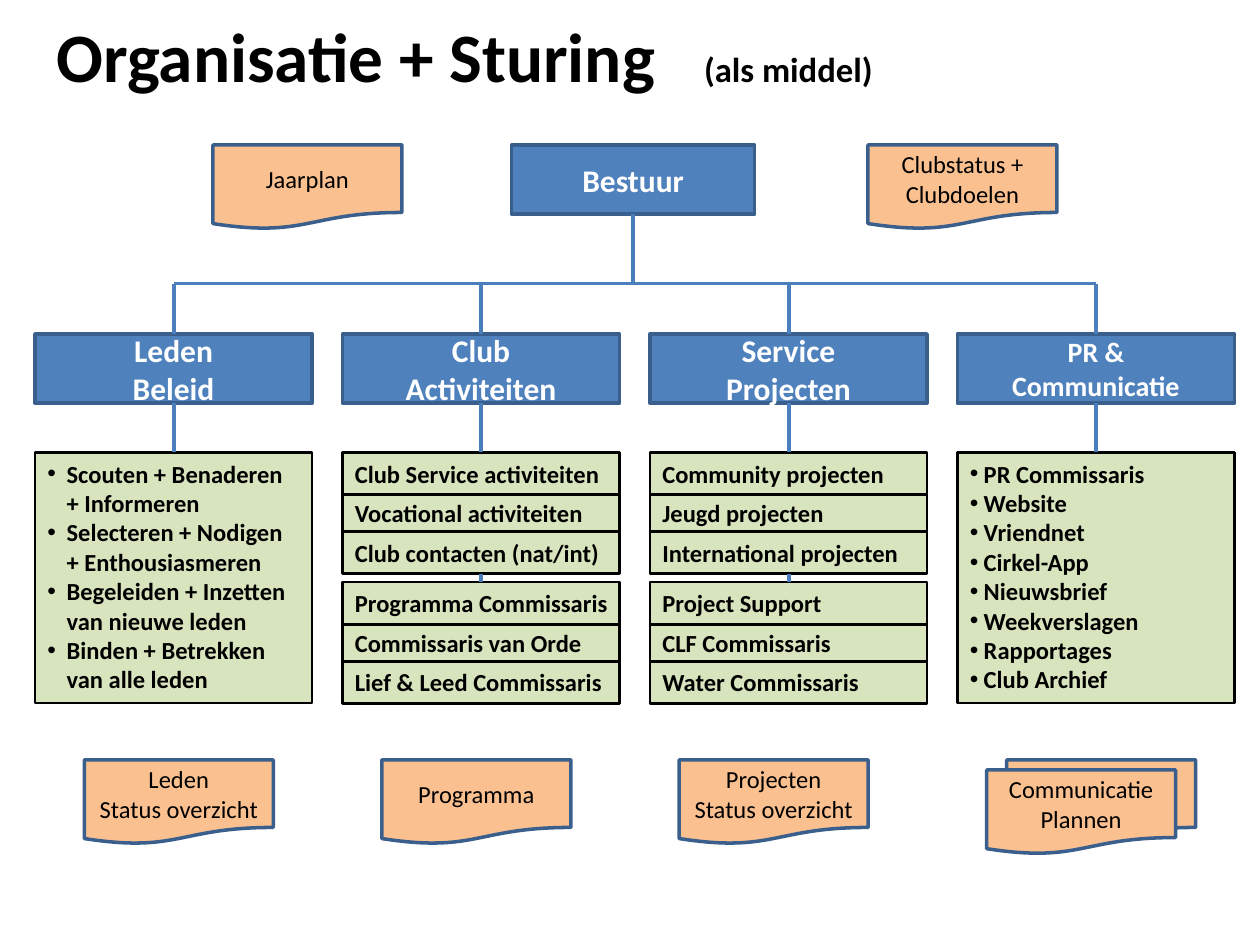
from lxml import etree
from pptx import Presentation
from pptx.dml.color import RGBColor
from pptx.enum.shapes import MSO_CONNECTOR, MSO_SHAPE
from pptx.enum.text import MSO_ANCHOR, PP_ALIGN
from pptx.oxml.ns import qn
from pptx.util import Pt

RECTANGLE, DOCUMENT = MSO_SHAPE.RECTANGLE, MSO_SHAPE.FLOWCHART_DOCUMENT
STRAIGHT = MSO_CONNECTOR.STRAIGHT
TOP, MIDDLE = MSO_ANCHOR.TOP, MSO_ANCHOR.MIDDLE
LEFT, CENTER = PP_ALIGN.LEFT, PP_ALIGN.CENTER
TOP_SIDE, BOTTOM_SIDE = 0, 2

BLACK = RGBColor(0x00, 0x00, 0x00)
WHITE = RGBColor(0xFF, 0xFF, 0xFF)
BLUE = RGBColor(0x4F, 0x81, 0xBD)
DARK_BLUE = RGBColor(0x3A, 0x5F, 0x8C)
LINE_BLUE = RGBColor(0x4B, 0x7E, 0xBC)
GREEN = RGBColor(0xD7, 0xE4, 0xBD)
ORANGE = RGBColor(0xFA, 0xC0, 0x90)

# Fill, outline, outline width, text colour, anchor, alignment, font values
HEADER = (BLUE, DARK_BLUE, 2, WHITE, MIDDLE, CENTER,
          {"name": "Calibri", "size": Pt(18), "bold": True})
SMALL_HEADER = HEADER[:-1] + ({**HEADER[-1], "size": Pt(16)},)
DETAIL = (GREEN, BLACK, 1.5, BLACK, TOP, LEFT,
          {"name": "Calibri", "size": Pt(14), "bold": True})
PAPER = (ORANGE, DARK_BLUE, 2, BLACK, MIDDLE, CENTER,
         {"name": "Calibri", "size": Pt(14), "bold": False})

COLUMN_LEFT, COLUMN_STEP, COLUMN_WIDTH = 20, 175.7, 158.4
HEADER_TOP, HEADER_HEIGHT = 190.8, 39.6
BUS_TOP = 162
DETAIL_TOP, DETAIL_HEIGHT = 258.5, 143.3
GROUP_STEP, ROW_STEP, ROW_HEIGHT = 74.2, 22.6, 24.2
PAPER_WIDTH, PAPER_HEIGHT = 108, 48.2

# Header style, header lines, text indent, then a list or groups of rows
COLUMNS = [
    (HEADER, ["Leden", "Beleid"], 11,
     ["•Scouten + Benaderen", "+ Informeren",
      "•Selecteren + Nodigen", "+ Enthousiasmeren",
      "•Begeleiden + Inzetten", "van nieuwe leden",
      "•Binden + Betrekken", "van alle leden"]),
    (HEADER, ["Club", "Activiteiten"], 0,
     [["Club Service activiteiten", "Vocational activiteiten",
       "Club contacten (nat/int)"],
      ["Programma Commissaris", "Commissaris van Orde",
       "Lief & Leed Commissaris"]]),
    (HEADER, ["Service", "Projecten"], 0,
     [["Community projecten", "Jeugd projecten",
       "International projecten"],
      ["Project Support", "CLF Commissaris", "Water Commissaris"]]),
    (SMALL_HEADER, ["PR &", "Communicatie"], 8,
     ["•PR Commissaris", "•Website", "•Vriendnet", "•Cirkel-App",
      "•Nieuwsbrief", "•Weekverslagen", "•Rapportages", "•Club Archief"]),
]

# Left, top and lines of each document
PAPERS = [
    (121.7, 82.8, ["Jaarplan"]),
    (496, 82.8, ["Clubstatus +", "Clubdoelen"]),
    (48.2, 434.2, ["Leden", "Status overzicht"]),
    (218.2, 434.2, ["Programma"]),
    (388.1, 434.2, ["Projecten", "Status overzicht"]),
    (575.3, 434.2, []),
    (563.8, 440, ["Communicatie", "Plannen"]),
]

deck = Presentation()
deck.slide_width, deck.slide_height = Pt(720), Pt(540)
page = deck.slides.add_slide(deck.slide_layouts[6])


def add_box(kind, left, top, width, height, lines, style, indent=0):
    fill, outline, weight, ink, anchor, align, font = style
    box = page.shapes.add_shape(kind, Pt(left), Pt(top), Pt(width), Pt(height))
    box.shadow.inherit = False
    box.fill.solid()
    box.fill.fore_color.rgb = fill
    box.line.color.rgb = outline
    box.line.width = Pt(weight)
    frame = box.text_frame
    frame.word_wrap = True
    frame.vertical_anchor = anchor
    if align == LEFT:  # room for the longest row on one line
        frame.margin_right = Pt(2)
    for index, line in enumerate(lines):
        para = frame.add_paragraph() if index else frame.paragraphs[0]
        para.alignment = align
        if indent:
            props = para._p.get_or_add_pPr()
            props.set("marL", str(Pt(indent)))
            if line.startswith("•"):
                props.set("indent", str(-Pt(indent)))
                etree.SubElement(props, qn("a:buFont")).set("typeface", "Arial")
                etree.SubElement(props, qn("a:buChar")).set("char", "•")
        span = para.add_run()
        span.text = line.removeprefix("•")
        span.font.color.rgb = ink
        for name, value in font.items():
            setattr(span.font, name, value)
    return box


def add_link(start, end, upper=None, lower=None):
    link = page.shapes.add_connector(STRAIGHT, *[Pt(v) for v in start + end])
    link.line.color.rgb = LINE_BLUE
    link.line.width = Pt(2.25)
    etree.SubElement(link._element.spPr, qn("a:effectLst"))
    if upper is not None:
        link.begin_connect(upper, BOTTOM_SIDE)
    if lower is not None:
        link.end_connect(lower, TOP_SIDE)


# Title with the subtitle at a tab stop
title = page.shapes.add_textbox(Pt(25.2), Pt(9.4), Pt(675), Pt(44))
title.text_frame.word_wrap = True
title.text_frame.vertical_anchor = MIDDLE
para = title.text_frame.paragraphs[0]
tabs = etree.SubElement(para._p.get_or_add_pPr(), qn("a:tabLst"))
tab = etree.SubElement(tabs, qn("a:tab"))
tab.set("pos", str(Pt(370)))
tab.set("algn", "l")
for text, size in [("Organisatie + Sturing", 39.6), ("\t(als middel)", 19.8)]:
    span = para.add_run()
    span.text = text
    span.font.color.rgb = BLACK
    for name, value in {"name": "Calibri", "size": Pt(size), "bold": True}.items():
        setattr(span.font, name, value)

# Board and the line that spans the columns
first_center = COLUMN_LEFT + COLUMN_WIDTH / 2
last_center = first_center + COLUMN_STEP * (len(COLUMNS) - 1)
board = add_box(RECTANGLE, 292.3, 82.8, 139, HEADER_HEIGHT, ["Bestuur"], HEADER)
add_link((361.8, 122.4), (361.8, BUS_TOP), upper=board)
add_link((first_center, BUS_TOP), (last_center, BUS_TOP))

# Columns: header, then one list or two groups of three rows
for number, (style, heading, indent, content) in enumerate(COLUMNS):
    left = COLUMN_LEFT + number * COLUMN_STEP
    center = left + COLUMN_WIDTH / 2
    header = add_box(RECTANGLE, left, HEADER_TOP, COLUMN_WIDTH, HEADER_HEIGHT,
                     heading, style)
    add_link((center, BUS_TOP), (center, HEADER_TOP), lower=header)
    above = header
    if indent:
        detail = add_box(RECTANGLE, left, DETAIL_TOP, COLUMN_WIDTH,
                         DETAIL_HEIGHT, content, DETAIL, indent)
        add_link((center, HEADER_TOP), (center, DETAIL_TOP), above, detail)
        continue
    for group, labels in enumerate(content):
        top = DETAIL_TOP + group * GROUP_STEP
        rows = {}
        for row in (1, 0, 2):  # the outer rows overlap the middle one
            rows[row] = add_box(RECTANGLE, left, top + row * ROW_STEP,
                                COLUMN_WIDTH, ROW_HEIGHT, [labels[row]], DETAIL)
        add_link((center, HEADER_TOP), (center, top), above, rows[0])
        above = rows[2]

# Documents
for left, top, lines in PAPERS:
    add_box(DOCUMENT, left, top, PAPER_WIDTH, PAPER_HEIGHT, lines, PAPER)

deck.save("out.pptx")
